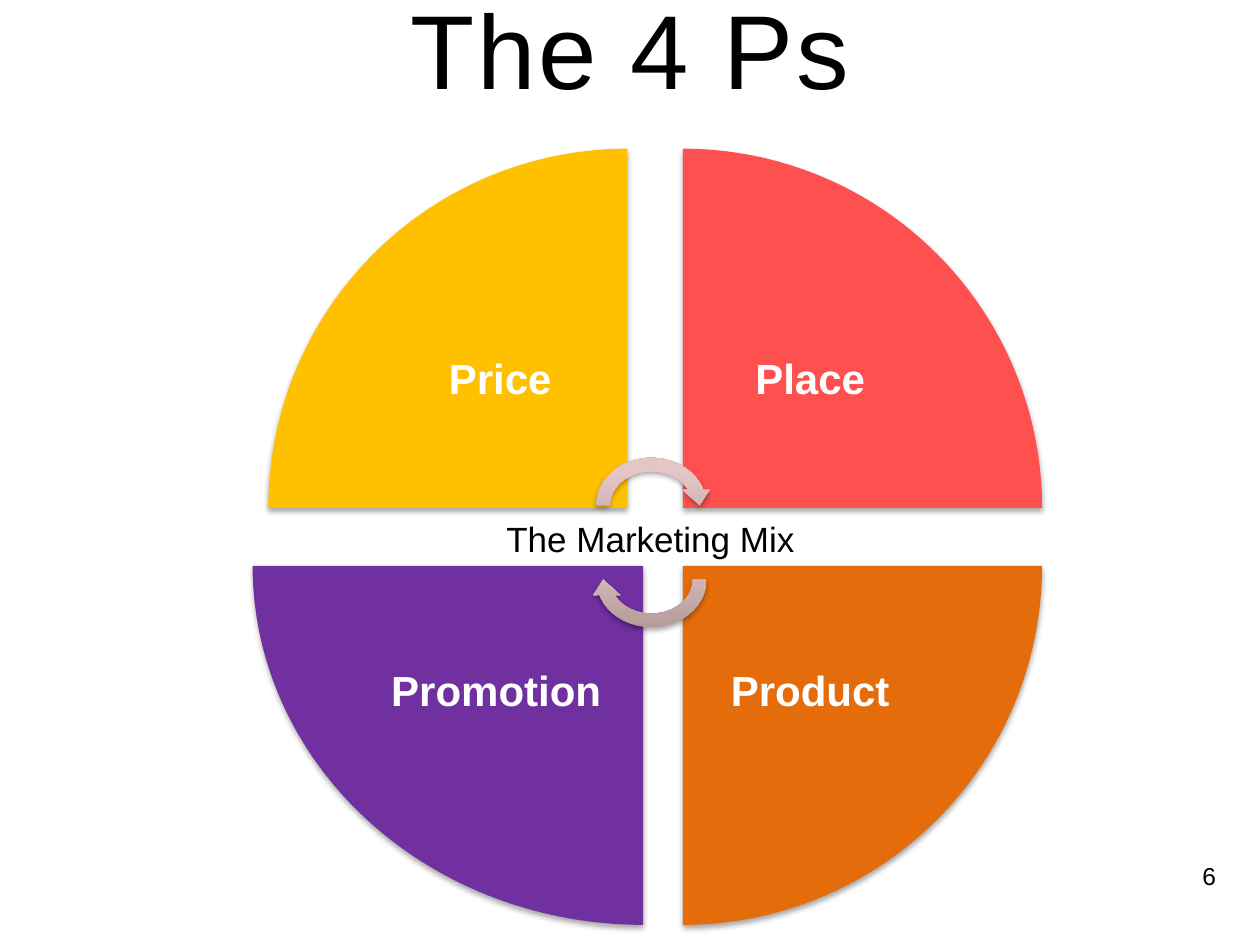
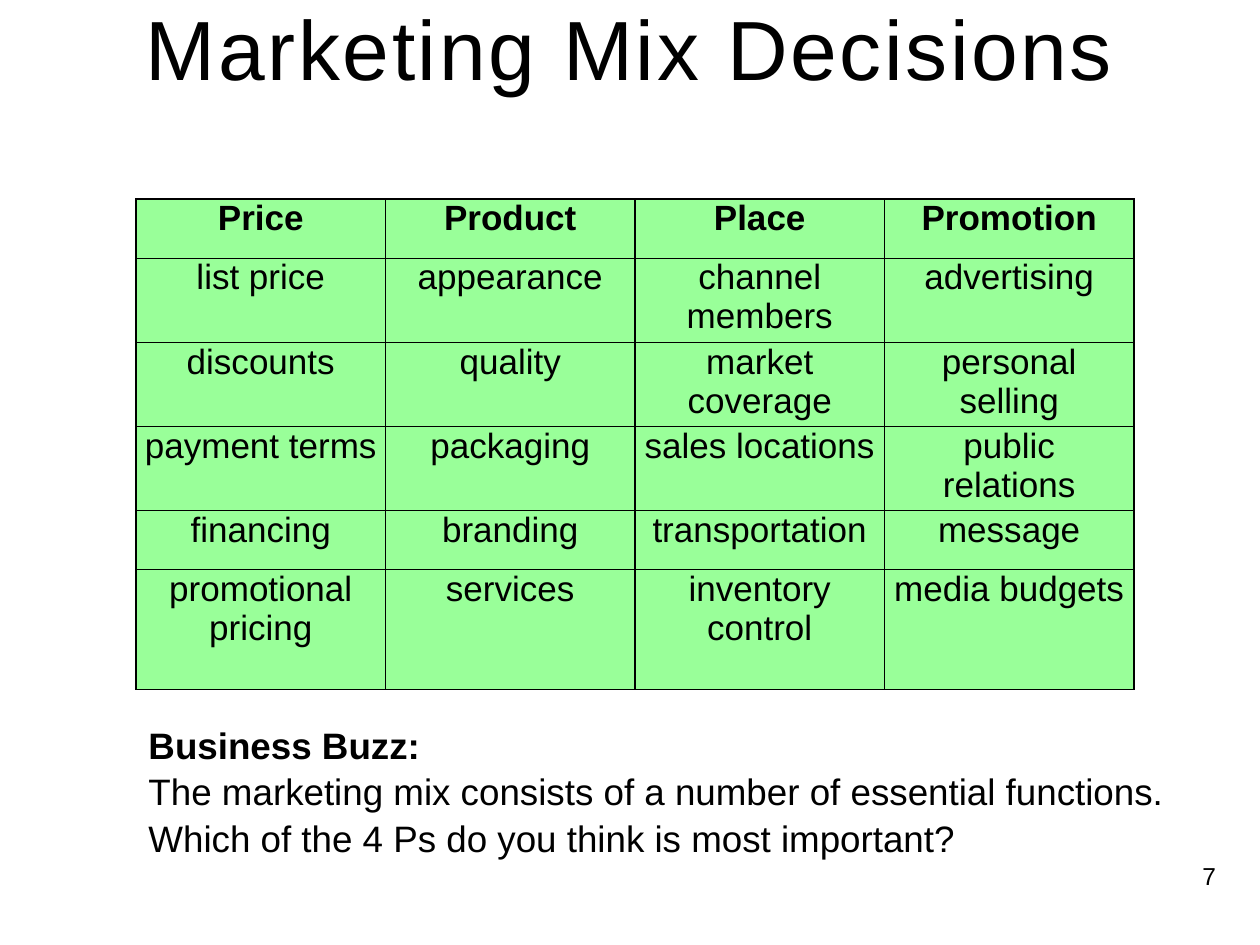
from collections import namedtuple

from lxml import etree
from pptx import Presentation
from pptx.dml.color import RGBColor
from pptx.enum.shapes import MSO_SHAPE
from pptx.enum.text import MSO_ANCHOR, MSO_AUTO_SIZE, PP_ALIGN
from pptx.oxml import parse_xml
from pptx.oxml.ns import nsdecls, qn
from pptx.util import Inches, Pt

FONT = "Arial"
COLOURS = {
    "text": "000000",
    "label": "FFFFFF",
    "price": "FFC000",
    "place": "FF5050",
    "product": "E46C0A",
    "promotion": "7030A0",
    "arrow_dark": "B09998",
    "arrow_mid": "E5C6C6",
    "arrow_light": "E6C7C6",
    "cell": "99FF99",
    "border": "000000",
}

Box = namedtuple("Box", "left top width height")
TITLE_BOX = Box(0, -0.25, 10, 1.25)
NUMBER_BOX = Box(7.42, 6.75, 2.33, 0.4)
WHEEL_BOX = Box(2.13, 1.18, 6.14, 6.16)
CAPTION_BOX = Box(3.92, 4.06, 3.67, 0.44)
TABLE_BOX = Box(1.08, 1.58, 7.92, 3.75)
BUZZ_BOX = Box(1.08, 5.67, 8.42, 1.51)

WEDGE = 2.85
LABEL = 2.02
ARROW_WIDTH, ARROW_HEIGHT = 0.98, 0.86

# name, column, row, rotation, extra width toward the centre and outward
QUADRANTS = [
    ("Price", 0, 0, 0, 0),
    ("Place", 1, 0, 90, 0),
    ("Product", 1, 1, 180, 0),
    ("Promotion", 0, 1, 270, 0.25),
]

ROW_HEIGHTS = [0.47, 0.62, 0.62, 0.62, 0.47, 0.95]
DECISIONS = [
    ("Price", "Product", "Place", "Promotion"),
    ("list price", "appearance", "channel members", "advertising"),
    ("discounts", "quality", "market coverage", "personal selling"),
    ("payment terms", "packaging", "sales locations", "public relations"),
    ("financing", "branding", "transportation", "message"),
    ("promotional pricing", "services", "inventory control", "media budgets"),
]


def colour(name):
    return RGBColor.from_string(COLOURS[name])


def inches(box):
    return [Inches(length) for length in box]


def add_run(paragraph, text, size, ink="text", bold=False):
    run = paragraph.add_run()
    run.text = text
    run.font.name = FONT
    run.font.size = Pt(size)
    run.font.bold = bold
    run.font.color.rgb = colour(ink)
    return run


def add_text_frame(slide, box, anchor=MSO_ANCHOR.TOP):
    frame = slide.shapes.add_textbox(*inches(box)).text_frame
    frame.word_wrap = True
    frame.vertical_anchor = anchor
    return frame


def add_titled_slide(deck, title, size, number):
    slide = deck.slides.add_slide(deck.slide_layouts[5])
    heading = slide.shapes.title
    heading.left, heading.top, heading.width, heading.height = inches(TITLE_BOX)
    frame = heading.text_frame
    frame.auto_size = MSO_AUTO_SIZE.NONE
    frame.vertical_anchor = MSO_ANCHOR.MIDDLE
    frame.paragraphs[0].alignment = PP_ALIGN.CENTER
    run = add_run(frame.paragraphs[0], title, size)
    run.font._element.set("spc", "150")

    footer = add_text_frame(slide, NUMBER_BOX, MSO_ANCHOR.MIDDLE).paragraphs[0]
    footer.alignment = PP_ALIGN.RIGHT
    add_run(footer, str(number), 14)
    return slide


def add_raised_shape(slide, preset, box, rotation):
    """Add an outline-free shape with a soft shadow below it."""
    shape = slide.shapes.add_shape(preset, *inches(box))
    shape.rotation = rotation
    shape.line.fill.background()
    shape.shadow.inherit = False
    effects = shape._element.spPr.find(qn("a:effectLst"))
    effects.append(parse_xml(
        f'<a:outerShdw {nsdecls("a")} blurRad="40000" dist="23000" dir="5400000" '
        'rotWithShape="0"><a:srgbClr val="000000"><a:alpha val="35000"/>'
        '</a:srgbClr></a:outerShdw>'))
    return shape


def add_quadrant(slide, box, name, column, row, rotation, extra):
    """Draw one wedge in its corner of the box, with its label near the centre."""
    width = WEDGE + extra
    left = box.left + column * (box.width - WEDGE) - extra / 2
    top = box.top + row * (box.height - WEDGE)
    # A quarter turn swaps the sides of the frame around its centre.
    if rotation % 180:
        frame_box = Box(left + (width - WEDGE) / 2, top - (width - WEDGE) / 2, WEDGE, width)
    else:
        frame_box = Box(left, top, width, WEDGE)
    wedge = add_raised_shape(slide, MSO_SHAPE.PIE_WEDGE, frame_box, rotation)
    wedge.fill.solid()
    wedge.fill.fore_color.rgb = colour(name.lower())

    label_width = LABEL + extra * 0.68
    label_left = left if column else left + width - label_width
    label_top = top if row else top + WEDGE - LABEL
    frame = add_text_frame(slide, Box(label_left, label_top, label_width, LABEL),
                           MSO_ANCHOR.MIDDLE)
    frame.margin_left = frame.margin_right = Inches(0.19)
    frame.margin_top = frame.margin_bottom = Inches(0.19)
    label = frame.paragraphs[0]
    label.alignment = PP_ALIGN.LEFT if extra else PP_ALIGN.CENTER
    label.line_spacing = 0.9
    add_run(label, name, 24, "label", bold=True)


def add_cycle_arrow(slide, box, rotation):
    arrow = add_raised_shape(slide, MSO_SHAPE.CIRCULAR_ARROW, box, rotation)
    shades = [(0, "arrow_dark"), (80, "arrow_mid"), (100, "arrow_light")]
    gradient = parse_xml(
        f'<a:gradFill {nsdecls("a")} rotWithShape="0"><a:gsLst/>'
        '<a:lin ang="16200000" scaled="0"/></a:gradFill>')
    for position, shade in shades:
        stop = etree.SubElement(gradient[0], qn("a:gs"), pos=str(position * 1000))
        etree.SubElement(stop, qn("a:srgbClr"), val=COLOURS[shade])
    arrow._element.spPr.find(qn("a:prstGeom")).addnext(gradient)


def add_wheel(slide, box):
    for quadrant in QUADRANTS:
        add_quadrant(slide, box, *quadrant)
    arrow_left = box.left + 2.55
    for drop, rotation in [(2.4, 0), (2.99, 180)]:
        add_cycle_arrow(
            slide, Box(arrow_left, box.top + drop, ARROW_WIDTH, ARROW_HEIGHT), rotation)


def add_cell_borders(cell):
    properties = cell._tc.get_or_add_tcPr()
    for position, side in enumerate(("lnL", "lnR", "lnT", "lnB")):
        properties.insert(position, parse_xml(
            f'<a:{side} {nsdecls("a")} w="12700"><a:solidFill>'
            f'<a:srgbClr val="{COLOURS["border"]}"/></a:solidFill></a:{side}>'))


def add_decision_table(slide, box):
    table = slide.shapes.add_table(
        len(DECISIONS), len(DECISIONS[0]), *inches(box)).table
    table.first_row = table.horz_banding = False
    for column in table.columns:
        column.width = Inches(box.width / len(DECISIONS[0]))
    for row, (height, entries) in enumerate(zip(ROW_HEIGHTS, DECISIONS)):
        table.rows[row].height = Inches(height)
        for column, entry in enumerate(entries):
            cell = table.cell(row, column)
            cell.margin_left = cell.margin_right = Inches(0.07)
            cell.margin_top = cell.margin_bottom = 0
            cell.fill.solid()
            cell.fill.fore_color.rgb = colour("cell")
            add_cell_borders(cell)
            paragraph = cell.text_frame.paragraphs[0]
            paragraph.alignment = PP_ALIGN.CENTER
            add_run(paragraph, entry, 20, bold=row == 0)


def add_business_buzz(slide, box):
    frame = add_text_frame(slide, box)
    heading, question = frame.paragraphs[0], frame.add_paragraph()
    heading.line_spacing = question.line_spacing = 1.05
    add_run(heading, "Business Buzz:", 21, bold=True)
    add_run(question, "The marketing mix consists of a number of essential functions. "
                      "Which of the 4 Ps do you think is most important?", 21)


def build_four_ps(deck):
    slide = add_titled_slide(deck, "The 4 Ps", 60, 6)
    add_wheel(slide, WHEEL_BOX)
    caption = add_text_frame(slide, CAPTION_BOX).paragraphs[0]
    add_run(caption, "The Marketing Mix", 20)


def build_decisions(deck):
    slide = add_titled_slide(deck, "Marketing Mix Decisions", 48, 7)
    add_business_buzz(slide, BUZZ_BOX)
    add_decision_table(slide, TABLE_BOX)


def main():
    deck = Presentation()
    deck.slide_width, deck.slide_height = Inches(10), Inches(7.5)
    build_four_ps(deck)
    build_decisions(deck)
    deck.save("out.pptx")


if __name__ == "__main__":
    main()
